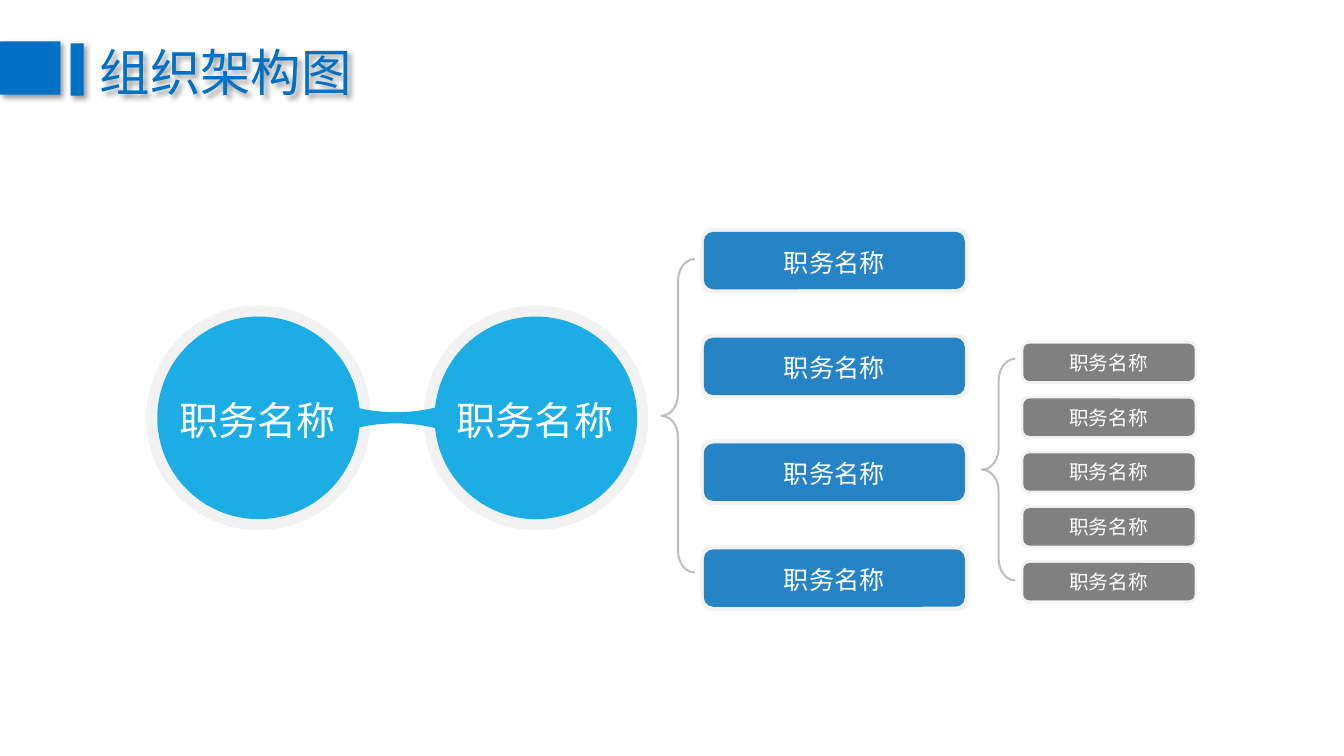
from dataclasses import dataclass

from lxml.etree import SubElement
from pptx import Presentation
from pptx.dml.color import RGBColor
from pptx.enum.shapes import MSO_SHAPE
from pptx.enum.text import MSO_AUTO_SIZE, PP_ALIGN
from pptx.oxml.ns import qn
from pptx.util import Inches, Pt

FONT = "Noto Sans CJK SC"
JOB_TITLE = "职务名称"
TITLE_BLUE = RGBColor(0x00, 0x70, 0xC4)
SKY = RGBColor(0x1C, 0xAD, 0xE4)
BLUE = RGBColor(0x26, 0x83, 0xC6)
GRAY = RGBColor(0x80, 0x80, 0x80)
RIM = RGBColor(0xF2, 0xF2, 0xF2)
BRACE_GRAY = RGBColor(0xBF, 0xBF, 0xBF)
WHITE = RGBColor(0xFF, 0xFF, 0xFF)


@dataclass
class Box:
    left: float
    top: float
    width: float
    height: float

    def lengths(self):
        return [Inches(v) for v in (self.left, self.top, self.width, self.height)]

    def moved(self, dx: float, dy: float) -> "Box":
        return Box(self.left + dx, self.top + dy, self.width, self.height)


@dataclass
class Level:
    kind: MSO_SHAPE
    color: RGBColor
    size: int
    rim: Box
    face: Box
    label: Box
    count: int
    dx: float = 0
    dy: float = 0


LEVELS = [
    Level(MSO_SHAPE.OVAL, SKY, 28, Box(1.45, 3.03, 2.23, 2.23),
          Box(1.56, 3.14, 2.01, 2.01), Box(1.67, 3.88, 1.77, 0.57), 2, dx=2.75),
    Level(MSO_SHAPE.ROUNDED_RECTANGLE, BLUE, 18, Box(6.95, 2.26, 2.66, 0.65),
          Box(6.98, 2.3, 2.59, 0.57), Box(7.67, 2.4, 1.21, 0.4), 4, dy=1.05),
    Level(MSO_SHAPE.ROUNDED_RECTANGLE, GRAY, 14, Box(10.13, 3.38, 1.74, 0.43),
          Box(10.15, 3.41, 1.7, 0.37), Box(10.5, 3.43, 0.99, 0.34), 5, dy=0.544),
]
BRACES = [Box(6.56, 2.57, 0.33, 3.11), Box(9.74, 3.56, 0.33, 2.2)]
TITLE_BARS = [Box(0, 0.41, 0.6, 0.53), Box(0.7, 0.43, 0.13, 0.52)]


def add_shadow(sp) -> None:
    spPr = sp.element.spPr
    for old in spPr.findall(qn("a:effectLst")):
        spPr.remove(old)
    effects = SubElement(spPr, qn("a:effectLst"))
    shadow = SubElement(effects, qn("a:outerShdw"), blurRad=str(Pt(4)),
                        dist=str(Pt(3)), dir="2700000", algn="tl", rotWithShape="0")
    color = SubElement(shadow, qn("a:srgbClr"), val="000000")
    SubElement(color, qn("a:alpha"), val="40000")


def paint(sp, color: RGBColor) -> None:
    sp.shadow.inherit = False
    sp.fill.solid()
    sp.fill.fore_color.rgb = color
    sp.line.fill.background()


def add_shape(s, kind: MSO_SHAPE, box: Box, color: RGBColor):
    sp = s.shapes.add_shape(kind, *box.lengths())
    paint(sp, color)
    return sp


def add_text(s, text: str, box: Box, *, size: int, color: RGBColor,
             align: PP_ALIGN = PP_ALIGN.LEFT):
    sp = s.shapes.add_textbox(*box.lengths())
    tf = sp.text_frame
    tf.word_wrap = False
    tf.auto_size = MSO_AUTO_SIZE.SHAPE_TO_FIT_TEXT
    p = tf.paragraphs[0]
    p.alignment = align
    r = p.add_run()
    r.text = text
    r.font.size = Pt(size)
    r.font.name = FONT
    r.font.color.rgb = color
    SubElement(r.font._element, qn("a:ea"), typeface=FONT)
    return sp


def add_level(s, level: Level) -> None:
    for i in range(level.count):
        rim, face, label = (box.moved(i * level.dx, i * level.dy)
                            for box in (level.rim, level.face, level.label))
        add_shape(s, level.kind, rim, RIM)
        add_shape(s, level.kind, face, level.color)
        add_text(s, JOB_TITLE, label, size=level.size, color=WHITE,
                 align=PP_ALIGN.CENTER)


def add_bridge(s, box: Box, dip: float, steps: int = 24) -> None:
    top, bottom = [], []
    for i in range(steps + 1):
        t = i / steps
        x = box.left + box.width * t
        bend = dip * 4 * t * (1 - t)
        top.append((Inches(x), Inches(box.top + bend)))
        bottom.append((Inches(x), Inches(box.top + box.height - bend)))
    outline = top + bottom[::-1]
    builder = s.shapes.build_freeform(*outline[0])
    builder.add_line_segments(outline[1:], close=True)
    paint(builder.convert_to_shape(), SKY)


def add_brace(s, box: Box) -> None:
    sp = s.shapes.add_shape(MSO_SHAPE.LEFT_BRACE, *box.lengths())
    sp.shadow.inherit = False
    sp.adjustments[0] = 0.646
    sp.adjustments[1] = 0.5
    sp.fill.background()
    sp.line.color.rgb = BRACE_GRAY
    sp.line.width = Pt(1.5)


def main() -> None:
    prs = Presentation()
    prs.slide_width, prs.slide_height = Inches(13.33), Inches(7.5)
    s = prs.slides.add_slide(prs.slide_layouts[6])
    add_shadow(add_text(s, "组织架构图", Box(0.89, 0.36, 2.73, 0.71),
                        size=36, color=TITLE_BLUE))
    for bar in TITLE_BARS:
        add_shadow(add_shape(s, MSO_SHAPE.RECTANGLE, bar, TITLE_BLUE))
    for level in LEVELS:
        add_level(s, level)
    add_bridge(s, Box(3.52, 4.04, 0.81, 0.21), dip=0.05)
    for brace in BRACES:
        add_brace(s, brace)
    prs.save("out.pptx")


if __name__ == "__main__":
    main()
